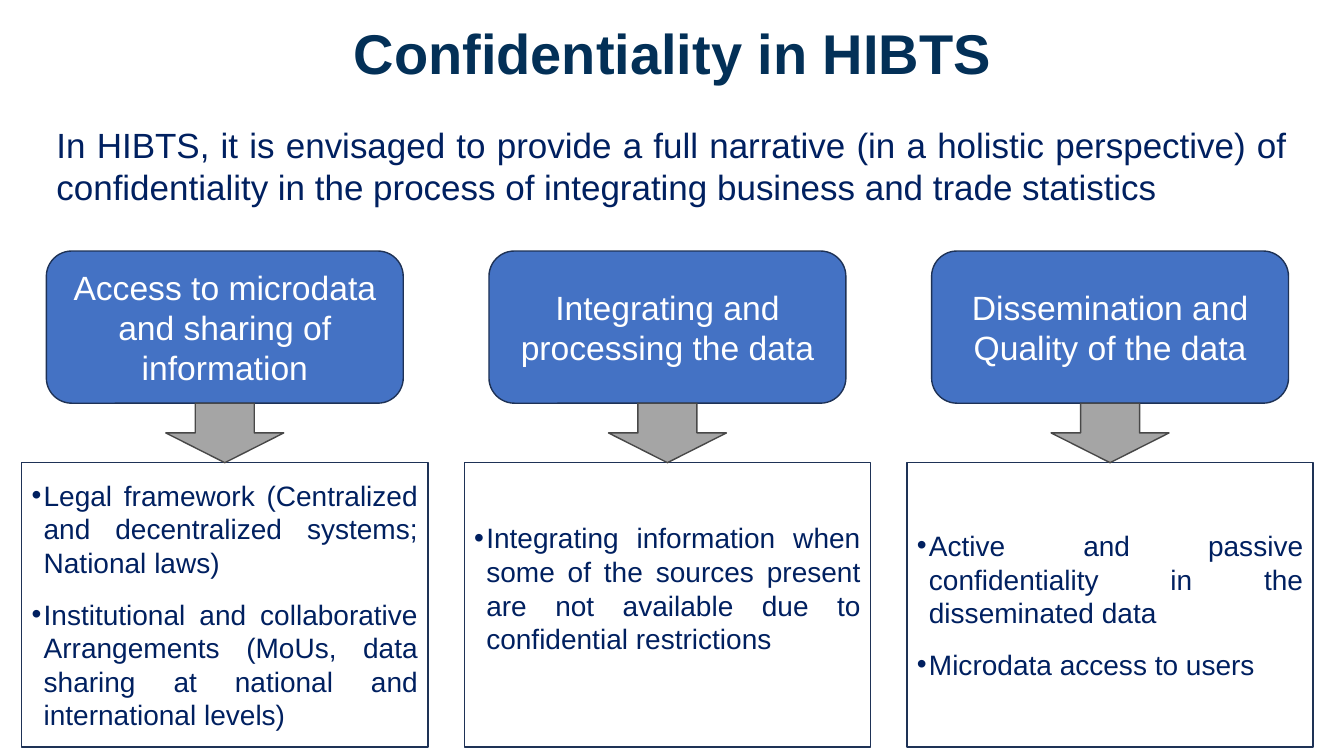
"""Build the slide on confidentiality in HIBTS."""
from lxml import etree
from pptx import Presentation
from pptx.dml.color import RGBColor
from pptx.enum.shapes import MSO_SHAPE
from pptx.enum.text import MSO_ANCHOR, MSO_AUTO_SIZE, PP_ALIGN
from pptx.oxml.ns import qn
from pptx.util import Inches, Pt

ROUND, RECT, ARROW = MSO_SHAPE.ROUNDED_RECTANGLE, MSO_SHAPE.RECTANGLE, MSO_SHAPE.DOWN_ARROW
TOP, MIDDLE = MSO_ANCHOR.TOP, MSO_ANCHOR.MIDDLE
CENTER, JUSTIFY = PP_ALIGN.CENTER, PP_ALIGN.JUSTIFY
FIXED = MSO_AUTO_SIZE.NONE

TITLE = "Confidentiality in HIBTS"
INTRO = ("In HIBTS, it is envisaged to provide a full narrative (in a holistic perspective) "
         "of confidentiality in the process of integrating business and trade statistics")
TOPICS = [
    ("Access to microdata and sharing of information",
     ["Legal framework (Centralized and decentralized systems; National laws)",
      "Institutional and collaborative Arrangements (MoUs, data sharing at national "
      "and international levels)"], 0.05),
    ("Integrating and processing the data",
     ["Integrating information when some of the sources present are not available "
      "due to confidential restrictions"], 0.38),
    ("Dissemination and Quality of the data",
     ["Active and passive confidentiality in the disseminated data",
      "Microdata access to users"], 0.05),
]
COLORS = {"title": "033057", "text": "002060", "white": "FFFFFF", "blue": "4472C4",
          "edge": "1E3256", "gray": "A5A5A5", "rim": "484848"}
FONT = "Arial"
MID, STEP = 2.23, 4.39
HEAD_Y, ARROW_Y, BOX_Y = 2.49, 4.0, 4.59
HEAD_W, ARROW_W, BOX_W = 3.54, 1.17, 4.03
BOX_H = 2.82


def color(name):
    return RGBColor.from_string(COLORS[name])


def write(shape, lines, size, tint, align, anchor=MIDDLE, bold=False, mark=None):
    frame = shape.text_frame
    frame.word_wrap = True
    frame.auto_size = FIXED
    frame.vertical_anchor = anchor
    for i, line in enumerate(lines):
        para = frame.add_paragraph() if i else frame.paragraphs[0]
        para.alignment = align
        para.space_before = Pt(13 if i else 0)
        props = para._p.get_or_add_pPr()
        indent = Inches(0.12) if mark else 0
        props.set("marL", str(indent))
        props.set("indent", str(-indent))
        if mark:
            etree.SubElement(props, qn("a:buFont")).set("typeface", FONT)
            etree.SubElement(props, qn("a:buChar")).set("char", mark)
        else:
            etree.SubElement(props, qn("a:buNone"))
        run = para.add_run()
        run.text = line
        run.font.name = FONT
        run.font.size = Pt(size)
        run.font.bold = bold
        run.font.color.rgb = color(tint)


def place(shape, left, top, width, height):
    shape.left, shape.top = Inches(left), Inches(top)
    shape.width, shape.height = Inches(width), Inches(height)


def draw(slide, kind, mid, top, width, height, fill, line):
    shape = slide.shapes.add_shape(kind, Inches(mid - width / 2), Inches(top),
                                   Inches(width), Inches(height))
    shape.shadow.inherit = False
    shape.fill.solid()
    shape.fill.fore_color.rgb = color(fill)
    shape.line.color.rgb = color(line)
    shape.line.width = Pt(1)
    return shape


def main():
    deck = Presentation()
    deck.slide_width, deck.slide_height = Inches(13.33), Inches(7.5)
    slide = deck.slides.add_slide(deck.slide_layouts[1])
    title, body = slide.shapes.title, slide.placeholders[1]
    place(title, 0.92, 0.16, 11.5, 0.8)
    write(title, [TITLE], 40, "title", CENTER, bold=True)
    title.text_frame.paragraphs[0].line_spacing = 0.9
    place(body, 0.46, 1.18, 12.4, 0.7)
    write(body, [INTRO], 25, "text", JUSTIFY, TOP)

    for i, (topic, points, inset) in enumerate(TOPICS):
        mid = MID + i * STEP
        head = draw(slide, ROUND, mid, HEAD_Y, HEAD_W, ARROW_Y - HEAD_Y, "blue", "edge")
        write(head, [topic], 24, "white", CENTER)
        box = draw(slide, RECT, mid, BOX_Y, BOX_W, BOX_H, "white", "edge")
        write(box, points, 20, "text", JUSTIFY, mark="•")
        box.text_frame.margin_bottom = Inches(inset)
        draw(slide, ARROW, mid, ARROW_Y, ARROW_W, BOX_Y - ARROW_Y, "gray", "rim")
    deck.save("out.pptx")


if __name__ == "__main__":
    main()
